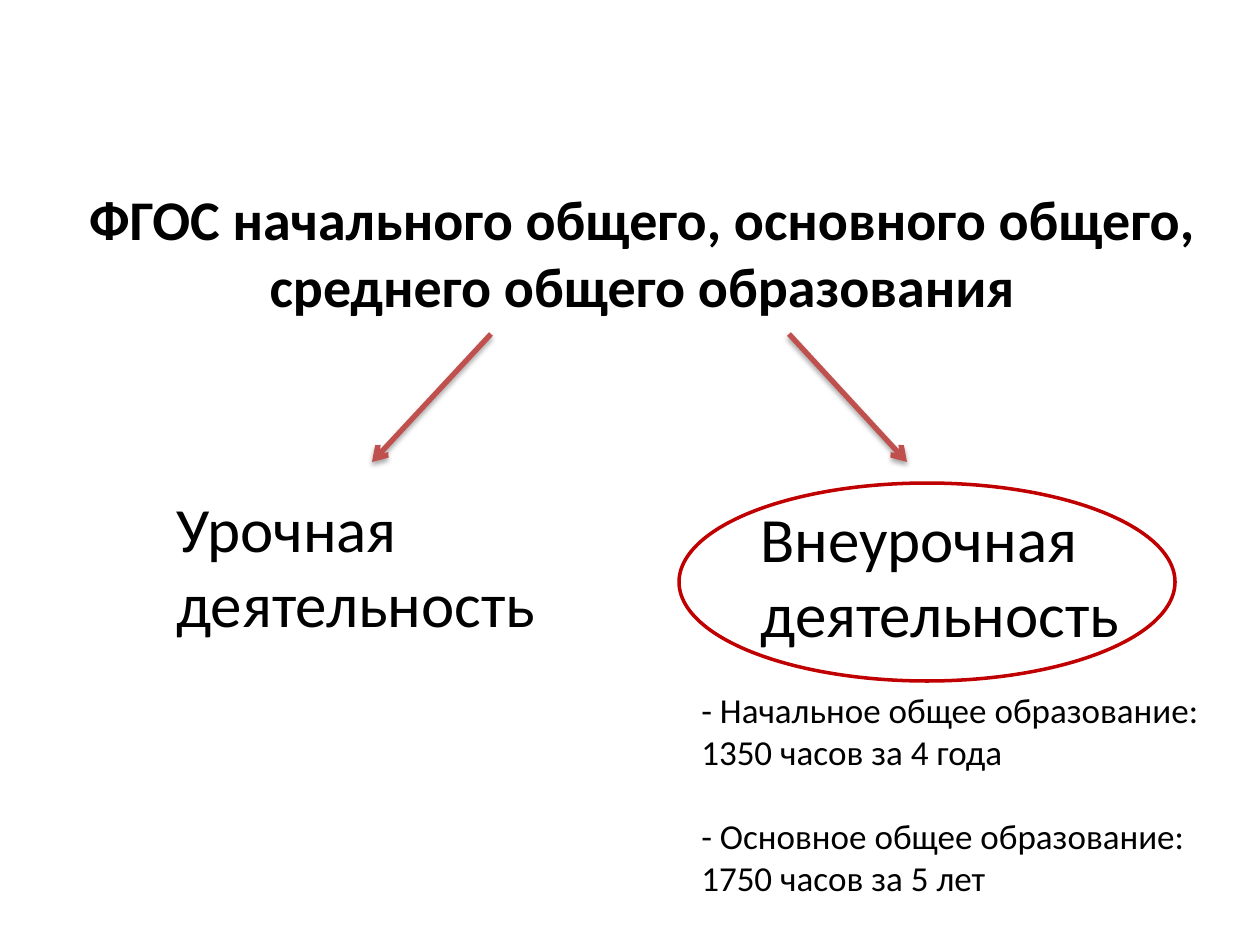
import pptx
import pptx.util
import pptx.dml.color
import pptx.enum.shapes
import pptx.enum.text
import pptx.oxml
import pptx.oxml.ns
from dataclasses import dataclass

PX = 914400 / 126


@dataclass(frozen=True)
class Theme:
    font: str = "Calibri"
    text: str = "000000"
    arrow: str = "C0504D"
    ring: str = "C00000"
    title_size: int = 32
    branch_size: int = 36
    note_size: int = 20
    note_gap: int = 24


THEME = Theme()

# Content: boxes are left, top, width, height in px
TITLE = ("ФГОС начального общего, основного общего, среднего общего образования",
         (25, 178, 1235, 149))
BRANCHES = [
    ("Урочная деятельность", (164, 483, 476, 165)),
    ("Внеурочная деятельность", (748, 493, 486, 165)),
]
NOTES = [
    ("- Начальное общее образование:", "1350 часов за 4 года"),
    ("- Основное общее образование:", "1750 часов за 5 лет"),
]
NOTES_BOX = (689, 682, 530, 263)
RING_BOX = (679, 483, 496, 198)
ARROWS = [(491, 334, 372, 462), (789, 334, 907, 462)]

SHADOW = (
    '<a:effectLst %s><a:outerShdw blurRad="39370" dist="22860" dir="5400000" '
    'rotWithShape="0"><a:srgbClr val="000000"><a:alpha val="35000"/></a:srgbClr>'
    '</a:outerShdw></a:effectLst>' % pptx.oxml.ns.nsdecls("a"))
ARROWHEAD = '<a:tailEnd %s type="arrow"/>' % pptx.oxml.ns.nsdecls("a")


def emu(values):
    return [round(value * PX) for value in values]


def color(name):
    return pptx.dml.color.RGBColor.from_string(name)


def add_text(page, lines, place, size, bold=False, centred=False):
    frame = page.shapes.add_textbox(*emu(place)).text_frame
    frame.word_wrap = True
    frame.text = "\n".join(lines)
    for para in frame.paragraphs:
        if centred:
            para.alignment = pptx.enum.text.PP_ALIGN.CENTER
        for span in para.runs:
            span.font.name = THEME.font
            span.font.size = pptx.util.Pt(size)
            span.font.bold = bold
            span.font.color.rgb = color(THEME.text)
    return frame


def add_arrow(page, ends):
    arrow = page.shapes.add_connector(
        pptx.enum.shapes.MSO_CONNECTOR.STRAIGHT, *emu(ends))
    arrow.line.color.rgb = color(THEME.arrow)
    arrow.line.width = pptx.util.Pt(3)
    arrow.line._get_or_add_ln().append(pptx.oxml.parse_xml(ARROWHEAD))
    arrow._element.spPr.append(pptx.oxml.parse_xml(SHADOW))


def main():
    deck = pptx.Presentation()
    deck.slide_width, deck.slide_height = emu((1260, 945))
    page = deck.slides.add_slide(deck.slide_layouts[6])

    # Heading and its two branches
    title, title_box = TITLE
    add_text(page, [title], title_box, THEME.title_size, bold=True, centred=True)
    for name, place in BRANCHES:
        add_text(page, [name], place, THEME.branch_size)
    for ends in ARROWS:
        add_arrow(page, ends)

    # Ring around the extracurricular branch
    ring = page.shapes.add_shape(
        pptx.enum.shapes.MSO_SHAPE.OVAL, *emu(RING_BOX))
    ring.shadow.inherit = False
    ring.fill.background()
    ring.line.color.rgb = color(THEME.ring)
    ring.line.width = pptx.util.Pt(2)

    # Hours per school level, with a gap before each later level
    lines = [line for level in NOTES for line in level]
    notes = add_text(page, lines, NOTES_BOX, THEME.note_size)
    for para in notes.paragraphs[2::2]:
        para.space_before = pptx.util.Pt(THEME.note_gap)

    deck.save("out.pptx")


if __name__ == "__main__":
    main()
